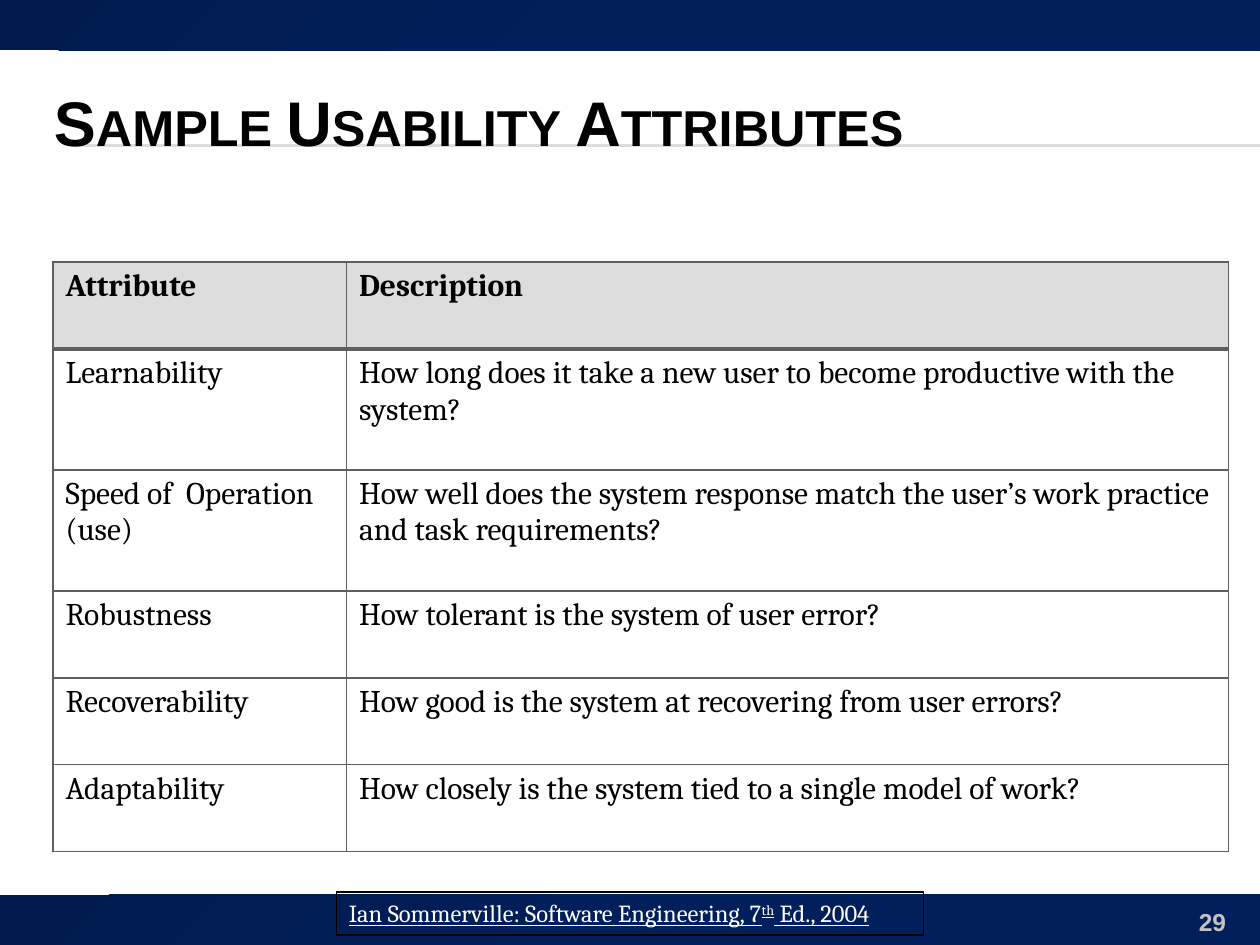
import lxml.etree
import pptx
import pptx.dml.color
import pptx.enum.shapes
import pptx.enum.text
import pptx.oxml.ns
import pptx.util

Inches = pptx.util.Inches
RGBColor = pptx.dml.color.RGBColor
MSO_SHAPE = pptx.enum.shapes.MSO_SHAPE
MSO_ANCHOR = pptx.enum.text.MSO_ANCHOR
PP_ALIGN = pptx.enum.text.PP_ALIGN
qn = pptx.oxml.ns.qn

BLACK = RGBColor(0x00, 0x00, 0x00)
WHITE = RGBColor(0xFF, 0xFF, 0xFF)
DARK_NAVY = RGBColor(0x01, 0x1B, 0x4E)
NAVY = RGBColor(0x01, 0x1F, 0x5B)
LIGHT_GRAY = RGBColor(0xDD, 0xDD, 0xDD)
NUMBER_GRAY = RGBColor(0xC3, 0xC3, 0xC3)
BORDER_GRAY = RGBColor(0x5F, 0x5F, 0x5F)


def add_text(paragraph, text, size=18, font="Cambria", color=BLACK, bold=False,
             align=PP_ALIGN.LEFT, **attributes):
    paragraph.alignment = align
    run = paragraph.add_run()
    run.text = text
    run.font.size = pptx.util.Pt(size)
    run.font.name = font
    run.font.color.rgb = color
    run.font.bold = bold
    for name, value in attributes.items():
        run._r.get_or_add_rPr().set(name, value)


def set_border(cell, side, width):
    properties = cell._tc.get_or_add_tcPr()
    line = lxml.etree.SubElement(properties, qn(f"a:ln{side}"), w=str(pptx.util.Pt(width)))
    fill = lxml.etree.SubElement(line, qn("a:solidFill"))
    lxml.etree.SubElement(fill, qn("a:srgbClr"), val=str(BORDER_GRAY))


presentation = pptx.Presentation()
presentation.slide_width = Inches(10)
presentation.slide_height = Inches(7.5)
slide = presentation.slides.add_slide(presentation.slide_layouts[6])
shapes = slide.shapes

for rule_top in (1.15, 1.16):
    rule = shapes.add_connector(pptx.enum.shapes.MSO_CONNECTOR.STRAIGHT,
                                Inches(0.56), Inches(rule_top), Inches(10), Inches(rule_top))
    rule.line.color.rgb = LIGHT_GRAY
    rule.line.width = pptx.util.Pt(0.75)
    lxml.etree.SubElement(rule._element.spPr, qn("a:effectLst"))

for band_top in (0, 7.1):
    band = shapes.add_shape(MSO_SHAPE.RECTANGLE, 0, Inches(band_top), Inches(10), Inches(0.4))
    band.shadow.inherit = False
    band.line.fill.background()
    band.fill.gradient()
    band.fill.gradient_angle = 315
    for stop, position, color in zip(band.fill.gradient_stops, (0, 0.5), (DARK_NAVY, NAVY)):
        stop.position = position
        stop.color.rgb = color

title = shapes.add_textbox(Inches(0.33), Inches(0.5), Inches(9.5), Inches(0.92)).text_frame
title.word_wrap = True
title.vertical_anchor = MSO_ANCHOR.MIDDLE
add_text(title.paragraphs[0], "Sample Usability Attributes", size=36, font="Arial",
         bold=True, cap="small")

citation = shapes.add_shape(MSO_SHAPE.ACTION_BUTTON_CUSTOM,
                            Inches(2.67), Inches(7.08), Inches(4.66), Inches(0.34))
citation.shadow.inherit = False
citation.fill.background()
citation.line.color.rgb = BLACK
citation.line.width = pptx.util.Pt(0.75)
citation.text_frame.word_wrap = False
citation.text_frame.auto_size = pptx.enum.text.MSO_AUTO_SIZE.SHAPE_TO_FIT_TEXT
citation.text_frame.vertical_anchor = MSO_ANCHOR.TOP
for text, baseline in (("Ian Sommerville: Software Engineering, 7", "0"),
                       ("th", "30000"), (" Ed., 2004", "0")):
    add_text(citation.text_frame.paragraphs[0], text, size=14, color=WHITE,
             u="sng", baseline=baseline)

attributes = [
    ("Attribute", "Description", 0.69),
    ("Learnability",
     "How long does it take a new user to become productive with the system?", 0.96),
    ("Speed of  Operation (use)",
     "How well does the system response match the user’s work practice and task requirements?",
     0.96),
    ("Robustness", "How tolerant is the system of user error?", 0.69),
    ("Recoverability", "How good is the system at recovering from user errors?", 0.69),
    ("Adaptability", "How closely is the system tied to a single model of work?", 0.69),
]
table = shapes.add_table(len(attributes), 2, Inches(0.42), Inches(2.08),
                         Inches(9.33), Inches(4.67)).table
table.columns[0].width = Inches(2.33)
table.columns[1].width = Inches(7)
for row_index, (attribute, description, height) in enumerate(attributes):
    table.rows[row_index].height = Inches(height)
    is_header = row_index == 0
    border_widths = {"L": 1, "R": 1, "T": 2 if row_index == 1 else 1, "B": 2 if is_header else 1}
    for column_index, text in enumerate((attribute, description)):
        cell = table.cell(row_index, column_index)
        for side, width in border_widths.items():
            set_border(cell, side, width)
        if is_header:
            cell.fill.solid()
            cell.fill.fore_color.rgb = LIGHT_GRAY
        else:
            cell.fill.background()
        add_text(cell.text_frame.paragraphs[0], text, bold=is_header)

number = shapes.add_textbox(Inches(9), Inches(7.15), Inches(0.83), Inches(0.27)).text_frame
number.word_wrap = True
add_text(number.paragraphs[0], "29", size=14, font="Arial", color=NUMBER_GRAY, bold=True,
         align=PP_ALIGN.RIGHT)

presentation.save("out.pptx")
